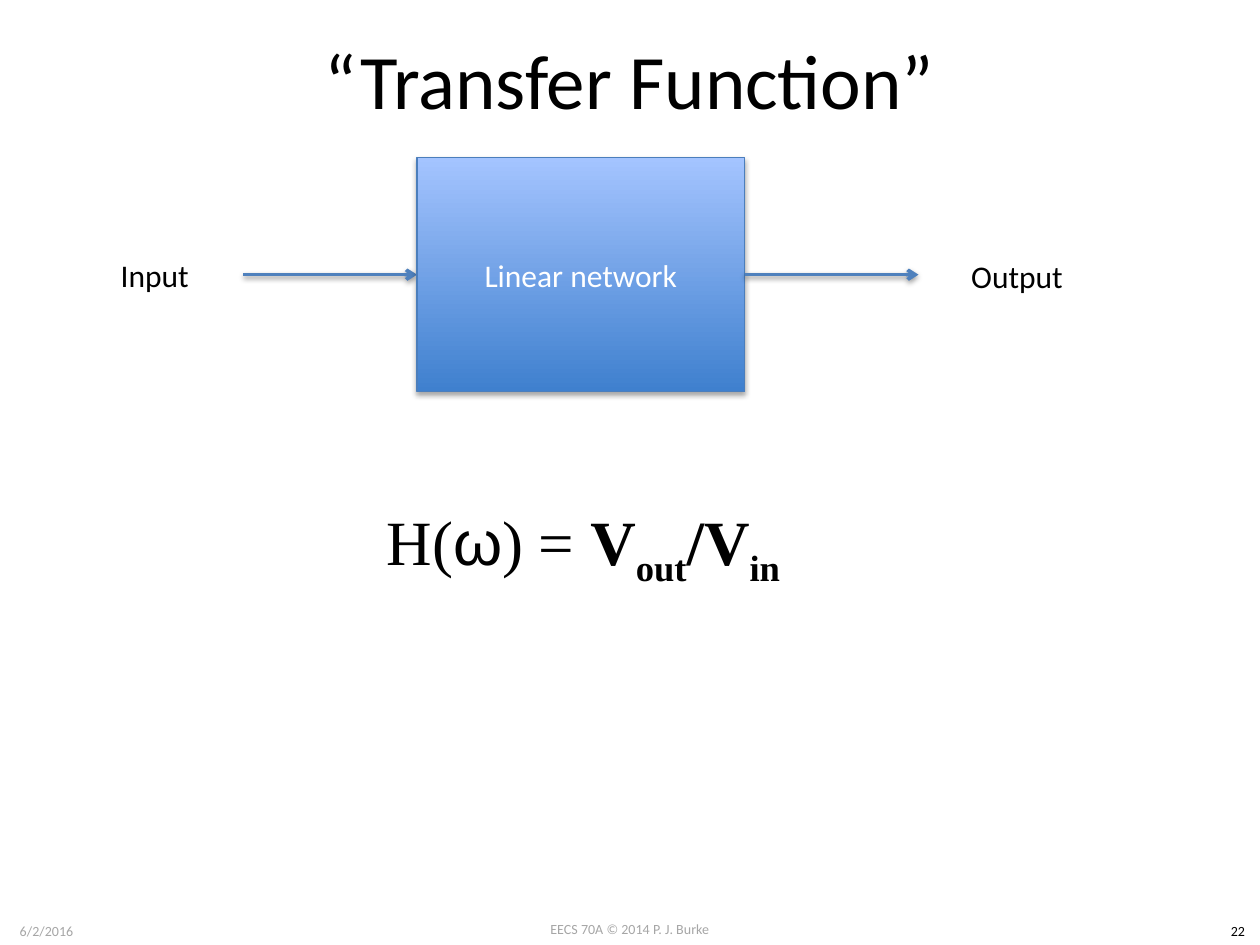
from lxml.etree import SubElement
from pptx import Presentation
from pptx.dml.color import RGBColor
from pptx.enum.shapes import MSO_CONNECTOR, MSO_SHAPE
from pptx.enum.text import MSO_ANCHOR, MSO_AUTO_SIZE, PP_ALIGN
from pptx.oxml.ns import qn
from pptx.util import Inches, Pt

BLACK = RGBColor(0x00, 0x00, 0x00)
WHITE = RGBColor(0xFF, 0xFF, 0xFF)
GRAY = RGBColor(0xA6, 0xA6, 0xA6)
ARROW_BLUE = RGBColor(0x4F, 0x81, 0xBD)
BORDER_BLUE = RGBColor(0x4B, 0x7E, 0xBC)
DEEP_BLUE = RGBColor(0x3F, 0x80, 0xCE)
PALE_BLUE = RGBColor(0xA4, 0xC4, 0xFF)


def add_run(paragraph, text, size, color=BLACK, font="Calibri", bold=False, baseline=0):
    run = paragraph.add_run()
    run.text = text
    run.font.size = Pt(size)
    run.font.name = font
    run.font.bold = bold
    run.font.color.rgb = color
    if baseline:
        run.font._element.set("baseline", str(baseline * 1000))
    return run


def add_label(slide, box, align=PP_ALIGN.LEFT, wrap=True, grow=True):
    label = slide.shapes.add_textbox(*map(Inches, box))
    frame = label.text_frame
    frame.word_wrap = wrap
    if grow:
        frame.auto_size = MSO_AUTO_SIZE.SHAPE_TO_FIT_TEXT
    else:
        frame.vertical_anchor = MSO_ANCHOR.MIDDLE
    frame.paragraphs[0].alignment = align
    return frame.paragraphs[0]


def add_shadow(shape, distance, opacity):
    effects = SubElement(shape._element.spPr, qn("a:effectLst"))
    shadow = SubElement(
        effects, qn("a:outerShdw"), blurRad=str(Pt(3.1)), dist=str(Pt(distance)),
        dir="5400000", rotWithShape="0",
    )
    black = SubElement(shadow, qn("a:srgbClr"), val=str(BLACK))
    SubElement(black, qn("a:alpha"), val=str(opacity * 1000))


def add_arrow(slide, left, y, length):
    arrow = slide.shapes.add_connector(
        MSO_CONNECTOR.STRAIGHT, Inches(left), Inches(y), Inches(left + length), Inches(y)
    )
    arrow.line.color.rgb = ARROW_BLUE
    arrow.line.width = Pt(2)
    SubElement(arrow._element.spPr.find(qn("a:ln")), qn("a:tailEnd"), type="arrow")
    add_shadow(arrow, 1.6, 38)


def add_network(slide, box):
    network = slide.shapes.add_shape(MSO_SHAPE.RECTANGLE, *map(Inches, box))
    network.fill.gradient()
    network.fill.gradient_angle = 90
    for stop, color in zip(network.fill.gradient_stops, (DEEP_BLUE, PALE_BLUE)):
        stop.color.rgb = color
    network.line.color.rgb = BORDER_BLUE
    network.line.width = Pt(0.75)
    add_shadow(network, 1.8, 35)
    network.text_frame.vertical_anchor = MSO_ANCHOR.MIDDLE
    caption = network.text_frame.paragraphs[0]
    caption.alignment = PP_ALIGN.CENTER
    add_run(caption, "Linear network", 18, WHITE)


def add_diagram(slide, left, top, width, height):
    middle = top + height / 2
    arrow_length = 1.38
    add_arrow(slide, left - arrow_length, middle, arrow_length)
    add_network(slide, (left, top, width, height))
    add_arrow(slide, left + width, middle, arrow_length)
    signals = (
        ("Input", left - 2.45, middle - 0.2, 0.75),
        ("Output", left + width + 1.7, middle - 0.19, 0.94),
    )
    for signal, x, y, label_width in signals:
        add_run(add_label(slide, (x, y, label_width, 0.4), wrap=False), signal, 18)


def add_title(slide, box):
    title = add_label(slide, box, PP_ALIGN.CENTER, grow=False)
    add_run(title, "“Transfer Function”", 44)


def add_formula(slide, box):
    formula = add_label(slide, box)
    serif = "Times New Roman"
    terms = (
        ("H(", serif, False, 0),
        ("ω", "Arial", False, 0),
        (") = ", serif, False, 0),
        ("V", serif, True, 0),
        ("out", serif, True, -25),
        ("/V", serif, True, 0),
        ("in", serif, True, -25),
    )
    for text, font, bold, baseline in terms:
        add_run(formula, text, 36, BLACK, font, bold, baseline)


def add_footer(slide, left, top, width, height):
    credit_width, date_width, number_width = 2.33, 0.74, 0.35
    entries = (
        ("EECS 70A © 2014 P. J. Burke", left + (width - credit_width) / 2, top - 0.01, credit_width, GRAY),
        ("6/2/2016", left, top, date_width, GRAY),
        ("22", left + width - number_width, top, number_width, BLACK),
    )
    for text, x, y, entry_width, color in entries:
        entry = add_label(slide, (x, y, entry_width, height), PP_ALIGN.CENTER)
        add_run(entry, text, 8, color)


def main():
    deck = Presentation()
    deck.slide_width = Inches(10)
    deck.slide_height = Inches(7.5)
    slide = deck.slides.add_slide(deck.slide_layouts[6])
    add_footer(slide, 0, 7.27, 10, 0.24)
    add_title(slide, (0.5, 0, 9, 1.25))
    add_diagram(slide, 3.31, 1.25, 2.6, 1.86)
    add_formula(slide, (2.97, 3.94, 4.31, 0.71))
    deck.save("out.pptx")


if __name__ == "__main__":
    main()
